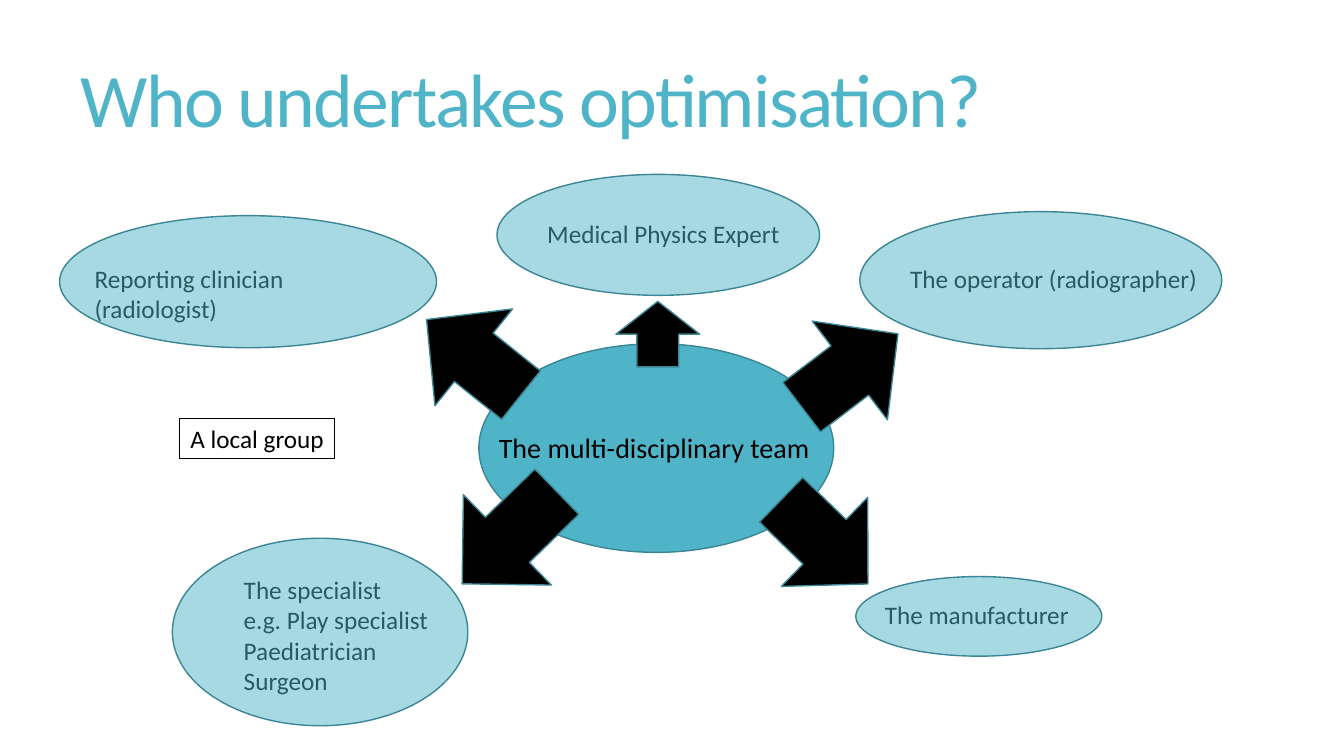
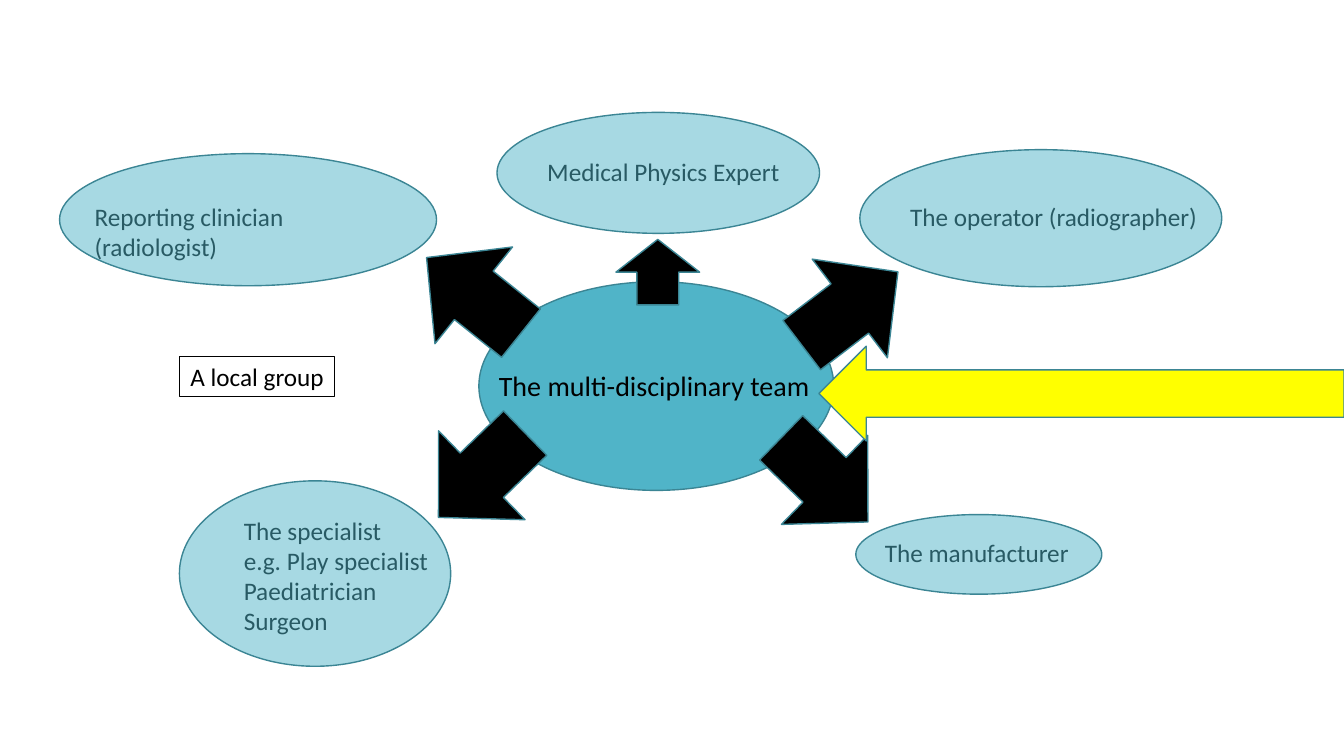
"""Two slides showing the multi-disciplinary team that undertakes optimisation."""
from dataclasses import dataclass, replace

from lxml import etree
from pptx import Presentation
from pptx.dml.color import RGBColor
from pptx.enum.shapes import MSO_SHAPE
from pptx.enum.text import MSO_ANCHOR, PP_ALIGN
from pptx.oxml.ns import qn
from pptx.util import Emu, Inches, Pt

OVAL, ARROW = MSO_SHAPE.OVAL, MSO_SHAPE.LEFT_ARROW
LEFT, CENTER = PP_ALIGN.LEFT, PP_ALIGN.CENTER
TOP, MIDDLE = MSO_ANCHOR.TOP, MSO_ANCHOR.MIDDLE

FONT = "Calibri"
TEAL, EDGE, BLACK, YELLOW = "50B4C8", "3B8594", "000000", "FFFF00"
WIDTH, HEIGHT = Inches(13.33), Inches(7.5)
LINE_ROW = 5.33
RAISED = -8.2


@dataclass(frozen=True)
class Box:
    """Place and size in percent of the slide's width and height."""
    x: float
    y: float
    w: float
    h: float

    def moved(self, dy: float) -> "Box":
        """Return this box shifted vertically."""
        return replace(self, y=self.y + dy)

    def emu(self) -> tuple[Emu, Emu, Emu, Emu]:
        """Return left, top, width and height as lengths."""
        return (Emu(round(WIDTH * self.x / 100)), Emu(round(HEIGHT * self.y / 100)),
                Emu(round(WIDTH * self.w / 100)), Emu(round(HEIGHT * self.h / 100)))


@dataclass(frozen=True)
class Member:
    """A member of the team: label, oval over it and arrow towards it."""
    lines: tuple[str, ...]
    label: Box
    oval: Box
    arrow: Box
    angle: float


TITLE = Box(5.25, 1.73, 88.35, 24.13)
TEAM_OVAL = Box(35.63, 45.47, 26.4, 27.6)
TEAM_LABEL = Box(36.38, 56.27, 25.2, 5.87)
LOCAL_GROUP = Box(13.35, 55.33, 11.55, LINE_ROW)
INCOMING = Box(60.93, 45.8, 39.07, 12.53)

CLINICIAN = Member(("Reporting clinician (radiologist)",), Box(6.3, 34.13, 24, LINE_ROW),
                   Box(4.43, 28.53, 28.05, 17.47), Box(30.75, 39.07, 9, 16.4), 38.7)
OPERATOR = Member(("The operator (radiographer)",), Box(66.98, 34.13, 23.78, LINE_ROW),
                  Box(63.98, 28, 26.93, 18.13), Box(58.73, 40.8, 9, 16.4), 142.7)
PHYSICIST = Member(("Medical Physics Expert",), Box(39.98, 28.27, 18.83, LINE_ROW),
                   Box(36.98, 23.07, 24, 16), Box(46.5, 38.67, 4.88, 11.07), 90)
SPECIALIST = Member(("The specialist", "e.g. Play specialist", "Paediatrician", "Surgeon"),
                    Box(17.4, 75.33, 17.85, 17.47), Box(12.83, 71.2, 21.98, 24.8),
                    Box(33, 62.8, 9.83, 16.67), 315.8)
MANUFACTURER = Member(("The manufacturer",), Box(65.1, 78.67, 16.65, LINE_ROW),
                      Box(63.68, 76.27, 18.3, 10.53), Box(56.85, 63.47, 9, 16.4), 224.1)
SMALL_SPECIALIST = replace(SPECIALIST, label=Box(17.4, 75.67, 16.43, 17.47),
                           oval=Box(13.35, 71.8, 20.18, 24.53),
                           arrow=Box(31.35, 62.87, 9, 16.4))


def rgb(color: str) -> RGBColor:
    """Turn a hex string into a colour."""
    return RGBColor.from_string(color)


def add_figure(s, kind, box: Box, fill: str, angle: float = 0, opacity: int = 100):
    """Draw an outlined preset shape."""
    sp = s.shapes.add_shape(kind, *box.emu())
    sp.shadow.inherit = False
    sp.rotation = angle
    sp.fill.solid()
    sp.fill.fore_color.rgb = rgb(fill)
    if opacity < 100:
        color = sp._element.spPr.find(qn("a:solidFill")).find(qn("a:srgbClr"))
        etree.SubElement(color, qn("a:alpha"), val=str(opacity * 1000))
    sp.line.color.rgb = rgb(EDGE)
    sp.line.width = Pt(1)
    return sp


def add_text(s, box: Box, lines: tuple[str, ...], size: float = 18, color: str = BLACK,
             align=LEFT, anchor=TOP, wrap: bool = True, spacing: float = 1,
             tracking: float = 0):
    """Write one paragraph for each line in a text box."""
    sp = s.shapes.add_textbox(*box.emu())
    tf = sp.text_frame
    tf.word_wrap = wrap
    tf.vertical_anchor = anchor
    for i, line in enumerate(lines):
        p = tf.add_paragraph() if i else tf.paragraphs[0]
        p.alignment = align
        p.line_spacing = spacing
        r = p.add_run()
        r.text = line
        r.font.name = FONT
        r.font.size = Pt(size)
        r.font.color.rgb = rgb(color)
        if tracking:
            r._r.get_or_add_rPr().set("spc", str(round(tracking * 100)))
    return sp


def add_member(s, member: Member, dy: float) -> None:
    """Draw a member's label, translucent oval and arrow."""
    add_text(s, member.label.moved(dy), member.lines)
    add_figure(s, OVAL, member.oval.moved(dy), TEAL, opacity=50)
    add_figure(s, ARROW, member.arrow.moved(dy), BLACK, member.angle)


def add_team(s, specialist: Member, dy: float = 0) -> None:
    """Draw the team, its members and the local group note."""
    add_figure(s, OVAL, TEAM_OVAL.moved(dy), TEAL)
    add_text(s, TEAM_LABEL.moved(dy), ("The multi-disciplinary team",), 20)
    for member in (CLINICIAN, OPERATOR, PHYSICIST, specialist, MANUFACTURER):
        add_member(s, member, dy)
    sp = add_text(s, LOCAL_GROUP.moved(dy), ("A local group",), align=CENTER, wrap=False)
    sp.line.color.rgb = rgb(BLACK)
    sp.line.width = Pt(0.75)


def main() -> None:
    """Build and save the presentation."""
    prs = Presentation()
    prs.slide_width, prs.slide_height = WIDTH, HEIGHT
    blank = prs.slide_layouts[6]

    s = prs.slides.add_slide(blank)
    add_text(s, TITLE, ("Who undertakes optimisation?",), 54, TEAL,
             anchor=MIDDLE, spacing=0.85, tracking=-1.2)
    add_team(s, SPECIALIST)

    s = prs.slides.add_slide(blank)
    add_team(s, SMALL_SPECIALIST, RAISED)
    add_figure(s, ARROW, INCOMING, YELLOW)

    prs.save("out.pptx")


if __name__ == "__main__":
    main()
